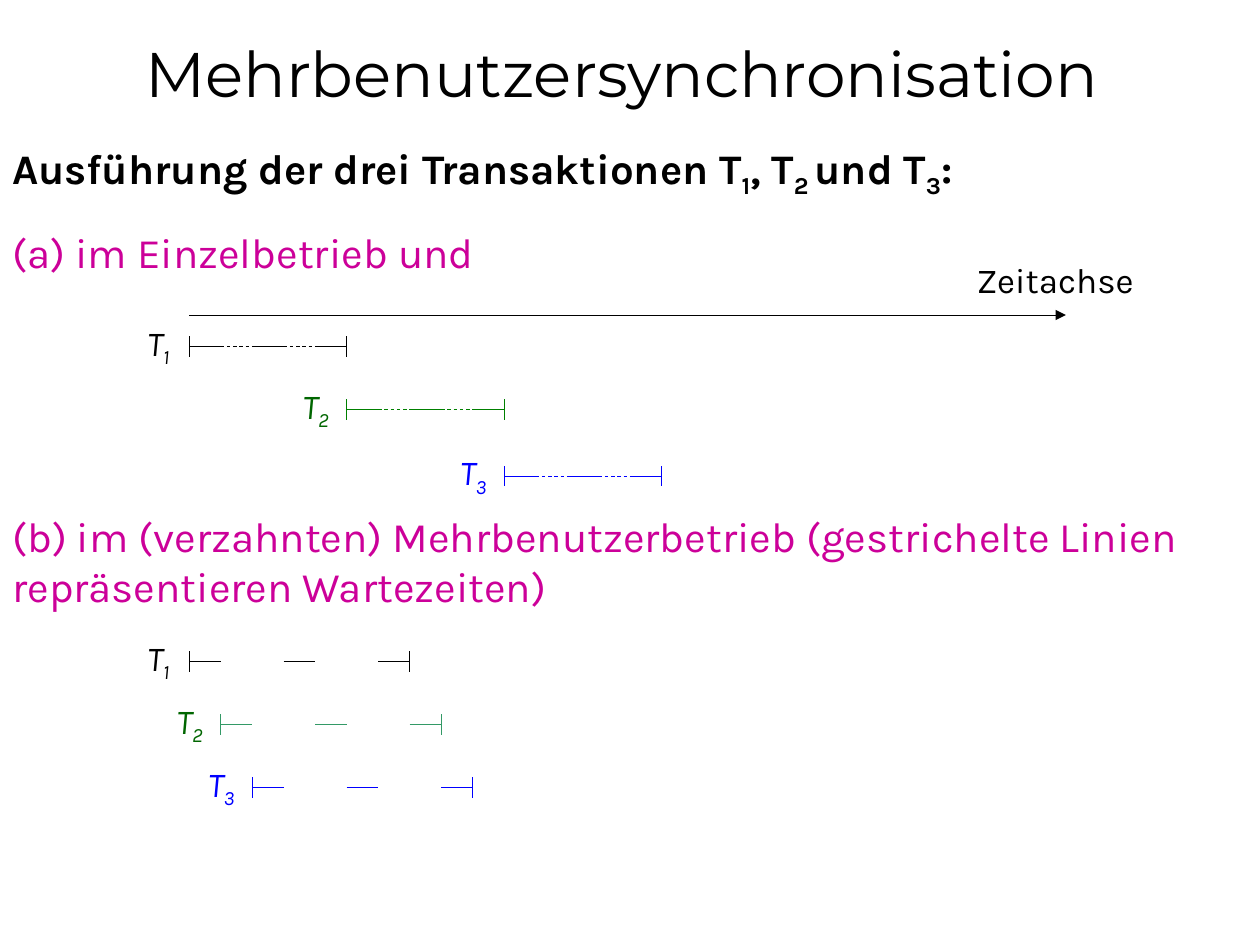
"""Build a slide on the serial and interleaved execution of three transactions."""
from lxml import etree
from pptx import Presentation
from pptx.dml.color import RGBColor
from pptx.enum import dml, shapes, text
from pptx.oxml import ns
from pptx.util import Inches, Pt

BLACK, GREEN, BLUE, MAGENTA = "000000", "006600", "0000FF", "CC0099"
STEP = 0.25


def rgb(value):
    """Return the colour for a hex string."""
    return RGBColor.from_string(value)


def add_text(parent, content, x, y, w, h, size=24, color=BLACK, font="Karla",
             bold=False, italic=False, align=text.PP_ALIGN.LEFT,
             anchor=text.MSO_ANCHOR.TOP):
    """Add a text box in which every second part between bars is a subscript."""
    sp = parent.add_textbox(Inches(x), Inches(y), Inches(w), Inches(h))
    tf = sp.text_frame
    tf.word_wrap = True
    tf.vertical_anchor = anchor
    p = tf.paragraphs[0]
    p.alignment = align
    for i, part in enumerate(content.split("|")):
        if not part:
            continue
        r = p.add_run()
        r.text = part
        r.font.name, r.font.size = font, Pt(size)
        r.font.bold, r.font.italic = bold, italic
        r.font.color.rgb = rgb(color)
        if i % 2:
            r._r.get_or_add_rPr().set("baseline", "-25000")


def add_line(parent, x1, y1, x2, y2, color=BLACK, dashed=False, arrow=False):
    """Add a thin straight line, optionally dashed or with an arrowhead."""
    cn = parent.add_connector(shapes.MSO_CONNECTOR.STRAIGHT, Inches(x1), Inches(y1),
                              Inches(x2), Inches(y2))
    cn.line.width = Pt(0.5)
    cn.line.color.rgb = rgb(color)
    if dashed:
        cn.line.dash_style = dml.MSO_LINE.DASH
    if arrow:
        etree.SubElement(cn.line._get_or_add_ln(), ns.qn("a:tailEnd"), type="triangle")
    etree.SubElement(cn._element.spPr, ns.qn("a:effectLst"))


def add_transaction(s, number, x, y, color, line_color, active, waiting=()):
    """Add a labelled bar with its active and waiting steps as one group."""
    grp = s.shapes.add_group_shape().shapes
    for step in sorted((*active, *waiting)):
        left = x + step * STEP
        add_line(grp, left, y, left + STEP, y, line_color, dashed=step in waiting)
    for end in (x, x + (max(active) + 1) * STEP):
        add_line(grp, end, y - 0.08, end, y + 0.08, line_color)
    add_text(grp, f"T|{number}", x - 0.58, y - 0.25, 0.67, 0.43, size=20,
             color=color, italic=True, align=text.PP_ALIGN.CENTER)


def main():
    """Build and save the slide."""
    prs = Presentation()
    prs.slide_width, prs.slide_height = Inches(10), Inches(7.5)
    s = prs.slides.add_slide(prs.slide_layouts[6])

    add_text(s.shapes, "Mehrbenutzersynchronisation ", 0, 0, 10, 0.92, size=36,
             font="Montserrat", align=text.PP_ALIGN.CENTER,
             anchor=text.MSO_ANCHOR.BOTTOM)
    add_text(s.shapes, "Ausführung der drei Transaktionen T|1|, T|2 |und T|3|:",
             0, 1.08, 10, 0.5, bold=True)
    add_text(s.shapes, "(a) im Einzelbetrieb und", 0, 1.75, 10, 0.5, color=MAGENTA)
    add_text(s.shapes, "(b) im (verzahnten) Mehrbenutzerbetrieb (gestrichelte Linien "
             "repräsentieren Wartezeiten)", 0, 4, 10, 0.9, color=MAGENTA)

    add_line(s.shapes, 1.5, 2.5, 8.46, 2.5, arrow=True)
    add_text(s.shapes, "Zeitachse", 7.5, 2, 1.75, 0.43, size=20,
             align=text.PP_ALIGN.CENTER)

    serial = ((2.75, BLACK, BLACK), (3.25, GREEN, "008000"), (3.78, BLUE, BLUE))
    for i, (y, color, line_color) in enumerate(serial):
        add_transaction(s, i + 1, 1.5 + i * 5 * STEP, y, color, line_color,
                        active=(0, 2, 4), waiting=(1, 3))

    interleaved = ((BLACK, BLACK), (GREEN, "339966"), (BLUE, BLUE))
    for i, (color, line_color) in enumerate(interleaved):
        add_transaction(s, i + 1, 1.5 + i * STEP, 5.25 + i * 0.5, color, line_color,
                        active=(0, 3, 6))

    prs.save("out.pptx")


if __name__ == "__main__":
    main()
